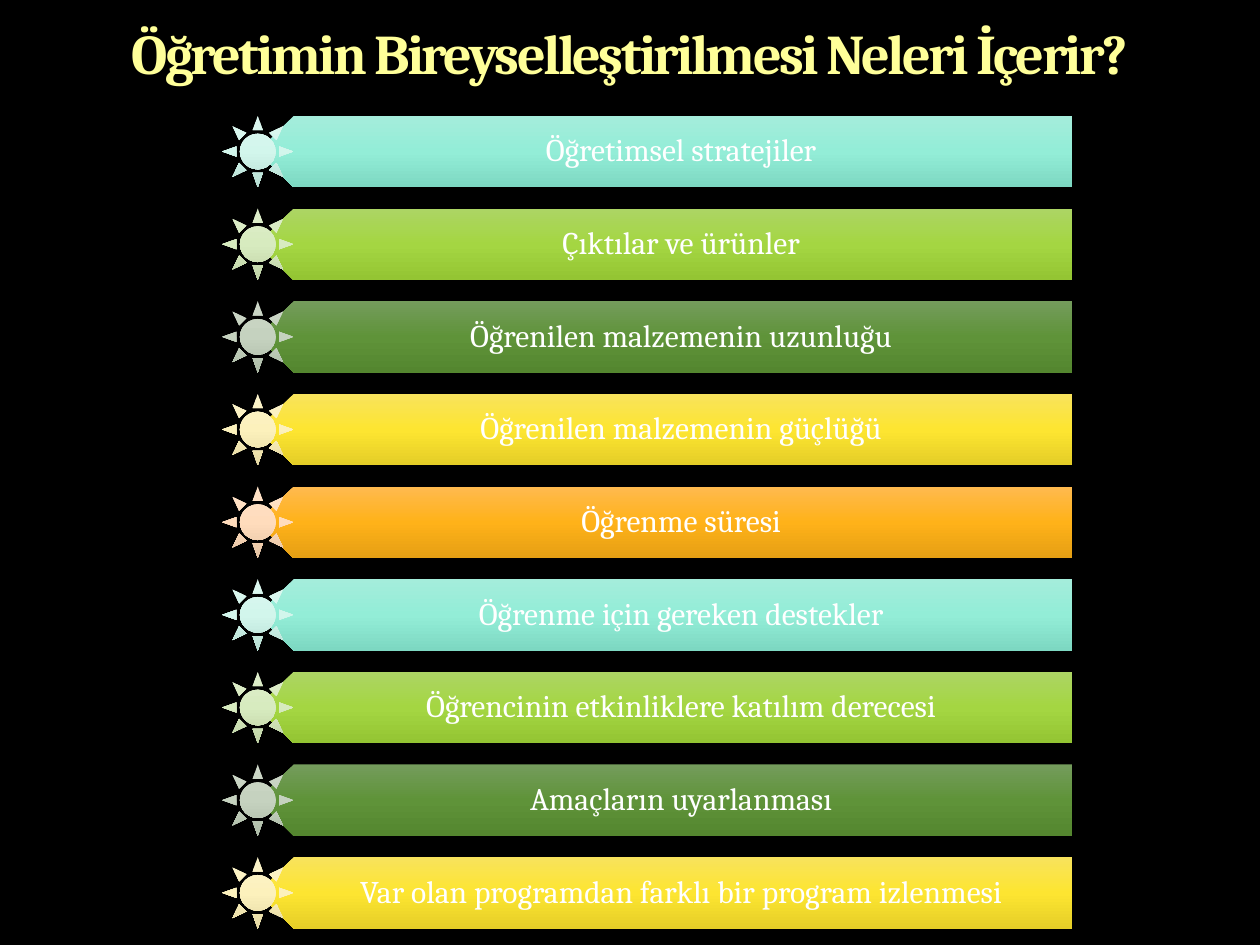
from lxml import etree
from pptx import Presentation
from pptx.dml.color import RGBColor
from pptx.enum.shapes import MSO_SHAPE
from pptx.enum.text import MSO_ANCHOR, PP_ALIGN
from pptx.oxml.ns import qn
from pptx.util import Pt

PENTAGON, SUN = MSO_SHAPE.PENTAGON, MSO_SHAPE.SUN
TOP, MIDDLE = MSO_ANCHOR.TOP, MSO_ANCHOR.MIDDLE
CENTER = PP_ALIGN.CENTER

FIRST_TOP, PITCH, HEIGHT = 66.2, 52.95, 40.8
THEMES = [  # bar colours, sun colours, each from top to bottom
    (("A4EDDB", "93EDD7", "7DD8C2"), ("DDF7F0", "D2F6EC", "B7DED3")),
    (("ACD564", "A4D642", "94C533"), ("DEEDCB", "D7EBBF", "C0D3A7")),
    (("749C5C", "5F9339", "54862F"), ("CDD7C8", "C5D2BF", "AEBCA8")),
    (("F8E35C", "FDE531", "E5CE27"), ("FBF3CB", "FCF1BC", "E5D9A3")),
    (("FFBA4F", "FFB219", "E59F14"), ("FFE3C9", "FFDCBC", "E5C4A4")),
]
TOPICS = [
    "Öğretimsel stratejiler",
    "Çıktılar ve ürünler",
    "Öğrenilen malzemenin uzunluğu",
    "Öğrenilen malzemenin güçlüğü",
    "Öğrenme süresi",
    "Öğrenme için gereken destekler",
    "Öğrencinin etkinliklere katılım derecesi",
    "Amaçların uyarlanması",
    "Var olan programdan farklı bir program izlenmesi",
]


def vertical_gradient(colors, positions=(0, 50, 100)):
    """Return a gradFill element that runs downwards, whatever the shape's rotation."""
    gradient = etree.Element(qn("a:gradFill"), rotWithShape="0")
    stops = etree.SubElement(gradient, qn("a:gsLst"))
    for color, position in zip(colors, positions):
        stop = etree.SubElement(stops, qn("a:gs"), pos=str(position * 1000))
        etree.SubElement(stop, qn("a:srgbClr"), val=color)
    etree.SubElement(gradient, qn("a:lin"), ang="5400000", scaled="0")
    return gradient


def add_text(shapes, bounds, text, size, anchor, insets):
    box = shapes.add_textbox(*[Pt(value) for value in bounds])
    frame = box.text_frame
    frame.text = text
    frame.word_wrap = True
    frame.vertical_anchor = anchor
    frame.margin_left, frame.margin_top, frame.margin_right, frame.margin_bottom = [
        Pt(inset) for inset in insets]
    para = frame.paragraphs[0]
    para.alignment = CENTER
    para.line_spacing = 0.9
    span = para.runs[0]
    span.font.name = "Cambria"
    span.font.size = Pt(size)
    span.font.color.rgb = RGBColor.from_string("FFFFFF")
    return span


deck = Presentation()
deck.slide_width, deck.slide_height = Pt(720), Pt(540)
page = deck.slides.add_slide(deck.slide_layouts[6])
page.background.fill.solid()
page.background.fill.fore_color.rgb = RGBColor.from_string("000000")

title = add_text(page.shapes, (31, 15.1, 657.4, 56.9),
                 "Öğretimin Bireyselleştirilmesi Neleri İçerir?", 32, TOP, (0, 0, 0, 0))
title.font.bold = True
title_properties = title.font._element if hasattr(title.font, "_element") else title._r.rPr
title_properties.set("spc", "-150")
title_fill = title_properties.find(qn("a:solidFill"))
title_properties.replace(
    title_fill, vertical_gradient(("FFFFB9", "FFFF99", "F6AE1E"), (0, 36, 86)))

topic_list = page.shapes.add_group_shape()
for index, topic in enumerate(TOPICS):
    top = FIRST_TOP + index * PITCH
    bar_colors, sun_colors = THEMES[index % len(THEMES)]

    bar = topic_list.shapes.add_shape(PENTAGON, Pt(147.4), Pt(top), Pt(465.5), Pt(HEIGHT))
    bar.rotation = 180
    add_text(topic_list.shapes, (157.6, top, 455.3, HEIGHT), topic, 18, MIDDLE,
             (18, 5.4, 10, 5.4))
    sun = topic_list.shapes.add_shape(SUN, Pt(126.9), Pt(top), Pt(HEIGHT), Pt(HEIGHT))

    for shape, colors in ((bar, bar_colors), (sun, sun_colors)):
        shape.shadow.inherit = False
        shape.line.fill.background()
        shape._element.spPr.find(qn("a:prstGeom")).addnext(vertical_gradient(colors))

deck.save("out.pptx")
